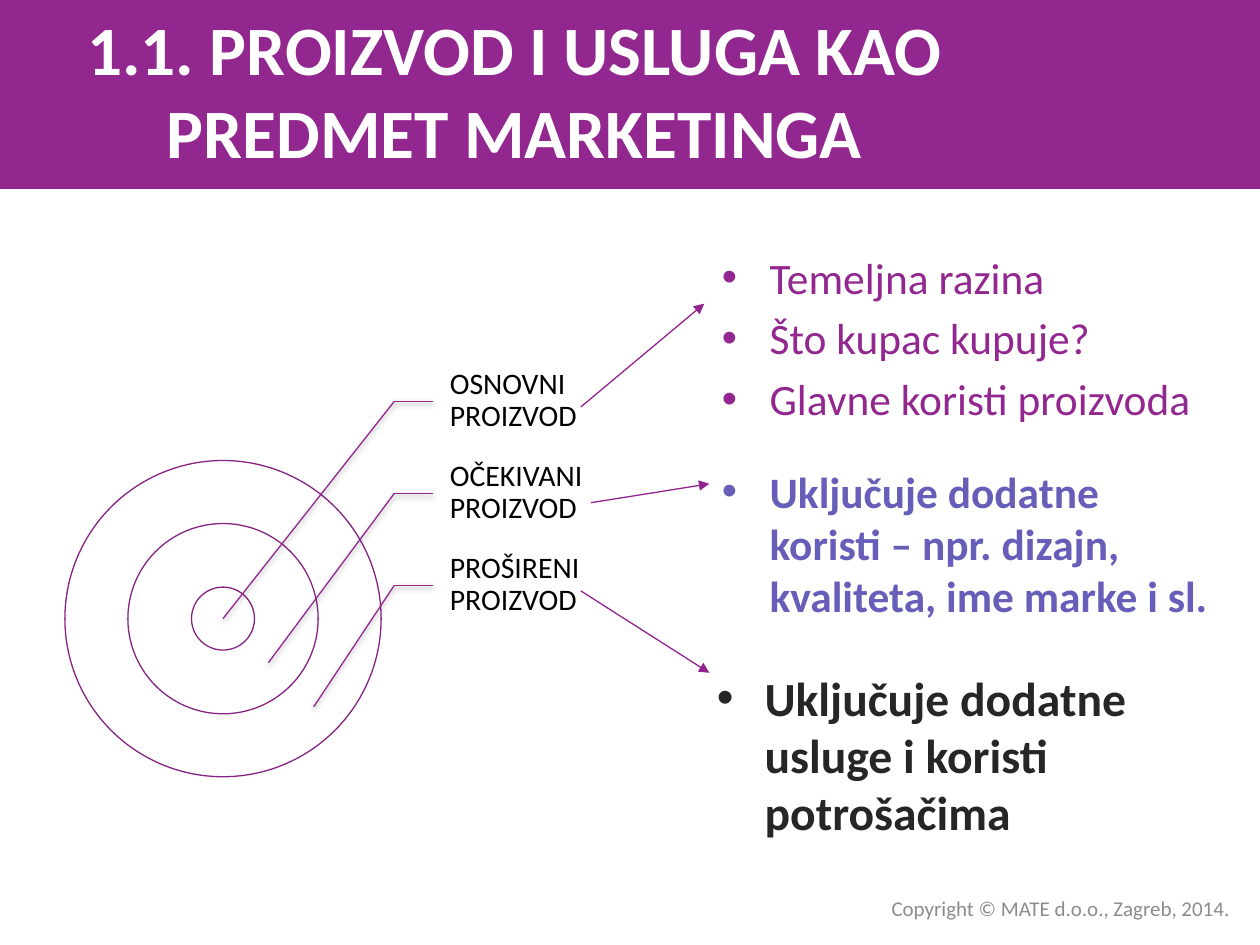
from dataclasses import dataclass

from lxml import etree
from pptx import Presentation
from pptx.dml.color import RGBColor
from pptx.enum.shapes import MSO_CONNECTOR, MSO_SHAPE
from pptx.enum.text import MSO_ANCHOR, PP_ALIGN
from pptx.oxml.ns import qn
from pptx.util import Inches, Pt

RECT, OVAL = MSO_SHAPE.RECTANGLE, MSO_SHAPE.OVAL
LINE = MSO_CONNECTOR.STRAIGHT
TOP, MIDDLE = MSO_ANCHOR.TOP, MSO_ANCHOR.MIDDLE
LEFT, CENTER, RIGHT = PP_ALIGN.LEFT, PP_ALIGN.CENTER, PP_ALIGN.RIGHT
LEFT_SIDE = 1


@dataclass(frozen=True)
class Theme:
    font: str = "Calibri"
    purple: str = "92278F"
    ring: str = "852382"
    arrow: str = "91248E"
    violet: str = "665EB8"
    dark: str = "262626"
    black: str = "000000"
    white: str = "FFFFFF"
    gray: str = "8C8C8C"
    title: float = 39.6
    large: float = 27.2
    body: float = 24.8
    label: float = 17
    small: float = 12
    stroke: float = 0.75


class Deck:
    def __init__(self, theme):
        self.theme = theme
        self.file = Presentation()
        self.file.slide_width = Inches(10)
        self.file.slide_height = Inches(7.5)
        self.slide = self.file.slides.add_slide(self.file.slide_layouts[6])

    def shape(self, kind, box, fill, line=None):
        item = self.slide.shapes.add_shape(kind, *map(Inches, box))
        item.shadow.inherit = False
        item.fill.solid()
        item.fill.fore_color.rgb = RGBColor.from_string(fill)
        if line:
            item.line.color.rgb = RGBColor.from_string(line)
            item.line.width = Pt(self.theme.stroke)
        else:
            item.line.fill.background()
        return item

    def text(self, box, lines, size, color, bold=False, align=LEFT,
             anchor=TOP, bullet=False, insets=None, spacing=None):
        item = self.slide.shapes.add_textbox(*map(Inches, box))
        frame = item.text_frame
        frame.word_wrap = True
        frame.vertical_anchor = anchor
        if insets:
            (frame.margin_left, frame.margin_top,
             frame.margin_right, frame.margin_bottom) = map(Inches, insets)
        for i, line in enumerate(lines):
            para = frame.paragraphs[0] if i == 0 else frame.add_paragraph()
            para.text = line
            para.alignment = align
            if spacing:
                para.line_spacing = spacing
            if i:
                para.space_before = Pt(round(size * 0.2))
            if bullet:
                self.bullet(para)
            para.font.name = self.theme.font
            para.font.size = Pt(size)
            para.font.bold = bold
            para.font.color.rgb = RGBColor.from_string(color)
        return item

    def bullet(self, para):
        props = para._p.get_or_add_pPr()
        props.set("marL", str(Inches(0.38)))
        props.set("indent", str(Inches(-0.38)))
        etree.SubElement(props, qn("a:buFont"), typeface="Arial")
        etree.SubElement(props, qn("a:buChar"), char="•")

    def line(self, start, end, color, head=False, shadow=False):
        item = self.slide.shapes.add_connector(
            LINE, *map(Inches, (*start, *end)))
        item.line.color.rgb = RGBColor.from_string(color)
        item.line.width = Pt(self.theme.stroke)
        if head:
            etree.SubElement(item.line._get_or_add_ln(), qn("a:tailEnd"),
                             type="triangle")
        effects = etree.SubElement(item._element.spPr, qn("a:effectLst"))
        if shadow:
            cast = etree.SubElement(
                effects, qn("a:outerShdw"), blurRad=str(Pt(3.1)),
                dist=str(Pt(1.6)), dir="5400000", rotWithShape="0")
            tint = etree.SubElement(cast, qn("a:srgbClr"),
                                    val=self.theme.black)
            etree.SubElement(tint, qn("a:alpha"), val="38000")
        return item

    def save(self):
        self.file.save("out.pptx")


def main():
    theme = Theme()
    deck = Deck(theme)
    deck.shape(RECT, (0, 0, 10, 1.5), theme.purple)

    mid_x, mid_y = 1.77, 4.91
    for size in (2.51, 1.51, 0.5):
        deck.shape(OVAL, (mid_x - size / 2, mid_y - size / 2, size, size),
                   theme.white, theme.ring)

    label_x, label_y, label_h, bend_x = 3.44, 2.82, 0.73, 3.13
    for i, name in enumerate(("OSNOVNI", "OČEKIVANI", "PROŠIRENI")):
        top = label_y + i * label_h
        label = deck.text((label_x, top, 1.26, label_h), [f"{name} PROIZVOD"],
                          theme.label, theme.black, anchor=MIDDLE,
                          insets=(0.13, 0.02, 0.02, 0.02), spacing=0.9)
        bend = (bend_x, top + label_h / 2)
        stub = deck.line(bend, (label_x, bend[1]), theme.purple, shadow=True)
        stub.end_connect(label, LEFT_SIDE)
        target = (mid_x + i * 0.36, mid_y + i * 0.35)
        deck.line(bend, target, theme.purple, shadow=True)

    notes = (
        (5.63, 1.94, theme.body, theme.purple, False,
         ["Temeljna razina", "Što kupac kupuje?",
          "Glavne koristi proizvoda"]),
        (5.63, 3.64, theme.body, theme.violet, True,
         ["Uključuje dodatne koristi – npr. dizajn, "
          "kvaliteta, ime marke i sl."]),
        (5.59, 5.26, theme.large, theme.dark, True,
         ["Uključuje dodatne usluge i koristi potrošačima"]),
    )
    for x, y, size, color, bold, lines in notes:
        deck.text((x, y, 4.09, 1.29), lines, size, color, bold, bullet=True)

    for start, end in (((4.61, 3.23), (5.59, 2.41)),
                       ((4.69, 3.99), (5.63, 3.84)),
                       ((4.61, 4.69), (5.63, 5.34))):
        deck.line(start, end, theme.arrow, head=True)

    deck.text((0, 0.08, 8.17, 1.25),
              ["1.1. PROIZVOD I USLUGA KAO PREDMET MARKETINGA"],
              theme.title, theme.white, True, CENTER, MIDDLE)
    deck.text((4.69, 7.06, 5.17, 0.3),
              ["Copyright © MATE d.o.o., Zagreb, 2014."],
              theme.small, theme.gray, align=RIGHT, anchor=MIDDLE)
    deck.save()


if __name__ == "__main__":
    main()
